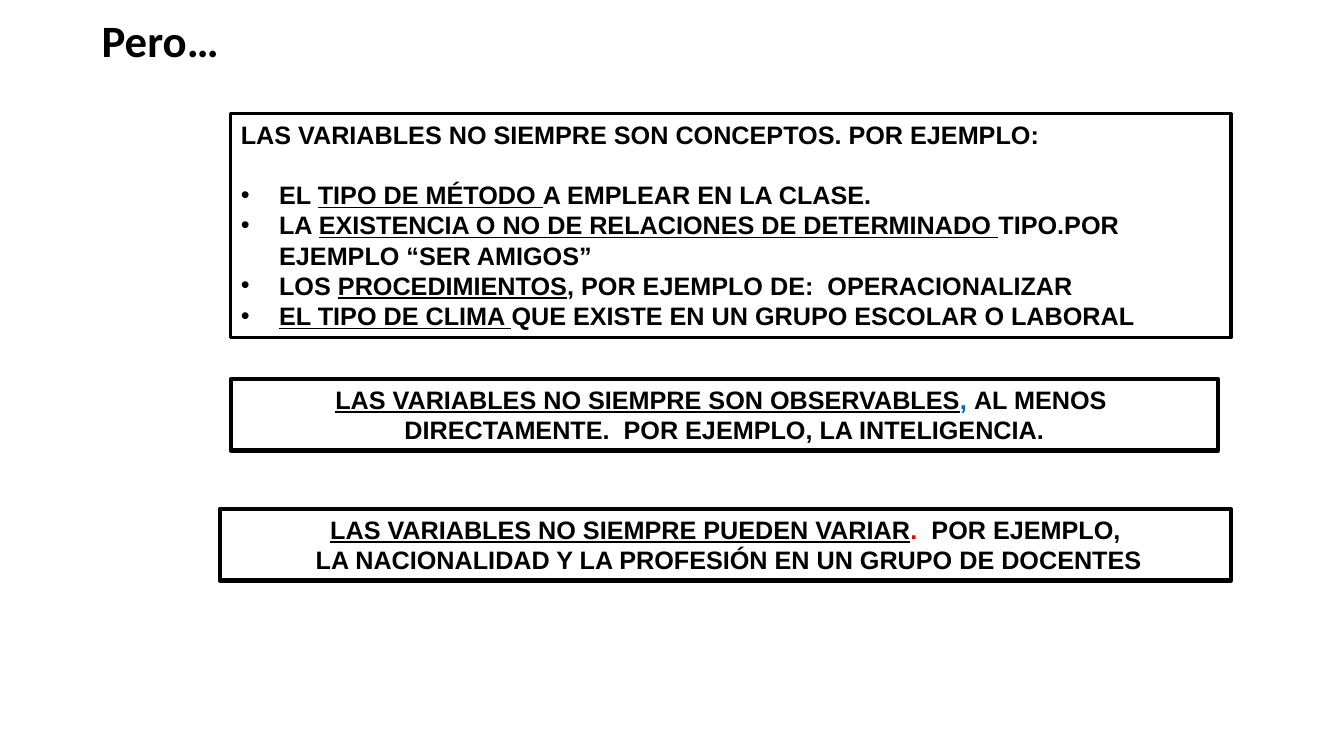
from dataclasses import dataclass

from lxml import etree
from pptx import Presentation
from pptx.dml.color import RGBColor
from pptx.enum import shapes, text
from pptx.oxml import ns
from pptx.util import Inches, Pt

BLACK = RGBColor(0x00, 0x00, 0x00)
BLUE = RGBColor(0x05, 0x63, 0xC1)
RED = RGBColor(0xFF, 0x00, 0x00)


@dataclass
class Span:
    words: str
    under: bool = False
    color: RGBColor = BLACK


@dataclass
class Line:
    spans: list[Span]
    bullet: bool = False
    after: float = 0


@dataclass
class Box:
    left: float
    top: float
    width: float
    height: float
    border: float
    align: text.PP_ALIGN
    lines: list[Line]


BOXES = [
    Box(2.29, 1.13, 9.92, 2.22, 2.25, text.PP_ALIGN.LEFT, [
        Line([Span("LAS VARIABLES NO SIEMPRE SON CONCEPTOS. POR EJEMPLO:")], after=21.6),
        Line([Span("EL "), Span("TIPO DE MÉTODO ", True),
              Span("A EMPLEAR EN LA CLASE.")], True),
        Line([Span("LA "), Span("EXISTENCIA O NO DE RELACIONES DE DETERMINADO ", True),
              Span("TIPO.POR EJEMPLO “SER AMIGOS”")], True),
        Line([Span("LOS "), Span("PROCEDIMIENTOS", True),
              Span(", POR EJEMPLO DE:  OPERACIONALIZAR")], True),
        Line([Span("EL TIPO DE CLIMA ", True),
              Span("QUE EXISTE EN UN GRUPO ESCOLAR O LABORAL")], True),
    ]),
    Box(2.29, 3.76, 9.79, 0.71, 3, text.PP_ALIGN.CENTER, [
        Line([Span("LAS VARIABLES NO SIEMPRE SON OBSERVABLES", True),
              Span(", ", color=BLUE), Span("AL MENOS ")]),
        Line([Span("DIRECTAMENTE.  POR EJEMPLO, LA INTELIGENCIA.")]),
    ]),
    Box(2.18, 5.05, 10.03, 0.71, 3, text.PP_ALIGN.CENTER, [
        Line([Span("LAS VARIABLES NO SIEMPRE PUEDEN VARIAR", True),
              Span(".  ", color=RED), Span("POR EJEMPLO,")]),
        Line([Span(" LA NACIONALIDAD Y LA PROFESIÓN EN UN GRUPO DE DOCENTES")]),
    ]),
]


def style(font, name: str, size: float, color: RGBColor) -> None:
    font.name, font.size, font.bold = name, Pt(size), True
    font.color.rgb = color


def add_bullet(para) -> None:
    props = para._p.get_or_add_pPr()
    props.set("marL", str(Inches(0.38)))
    props.set("indent", str(-Inches(0.38)))
    etree.SubElement(props, ns.qn("a:buFont")).set("typeface", "Arial")
    etree.SubElement(props, ns.qn("a:buChar")).set("char", "•")


def add_title(slide) -> None:
    title = slide.shapes.add_textbox(Inches(0.91), Inches(0.08), Inches(1.37), Inches(0.64))
    frame = title.text_frame
    frame.text = "Pero…"
    frame.word_wrap = False
    style(frame.paragraphs[0].runs[0].font, "Calibri", 32, BLACK)


def add_box(slide, box: Box) -> None:
    shape = slide.shapes.add_shape(
        shapes.MSO_SHAPE.RECTANGLE, Inches(box.left), Inches(box.top),
        Inches(box.width), Inches(box.height))
    shape.shadow.inherit = False
    shape.fill.background()
    shape.line.color.rgb = BLACK
    shape.line.width = Pt(box.border)
    frame = shape.text_frame
    frame.word_wrap = True
    frame.vertical_anchor = text.MSO_ANCHOR.TOP
    for i, line in enumerate(box.lines):
        para = frame.add_paragraph() if i else frame.paragraphs[0]
        para.alignment = box.align
        para.space_after = Pt(line.after)
        if line.bullet:
            add_bullet(para)
        for span in line.spans:
            run = para.add_run()
            run.text = span.words
            style(run.font, "Arial", 18, span.color)
            run.font.underline = span.under


def main() -> None:
    deck = Presentation()
    deck.slide_width, deck.slide_height = Inches(13.33), Inches(7.5)
    slide = deck.slides.add_slide(deck.slide_layouts[6])
    add_title(slide)
    for box in BOXES:
        add_box(slide, box)
    deck.save("out.pptx")


if __name__ == "__main__":
    main()
